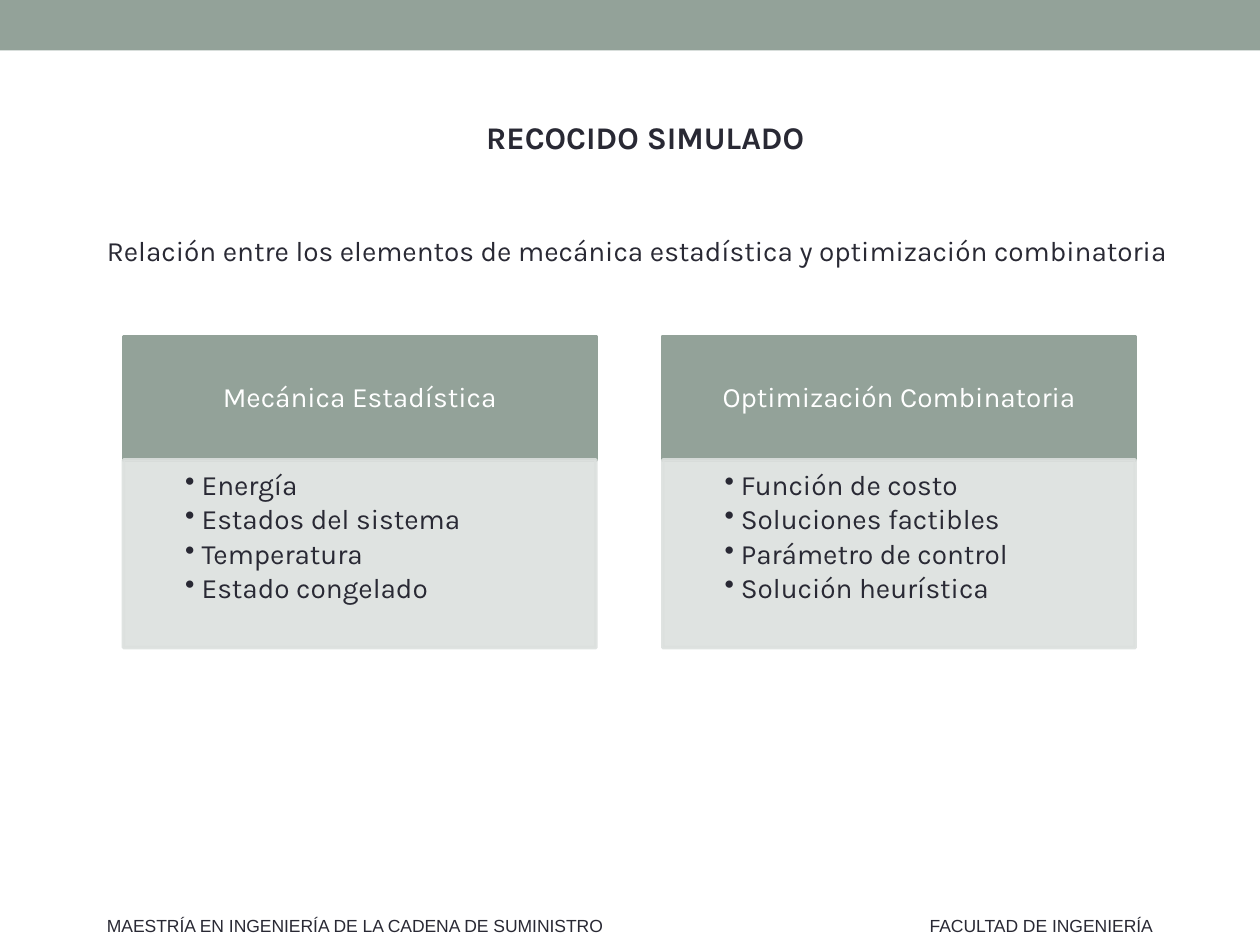
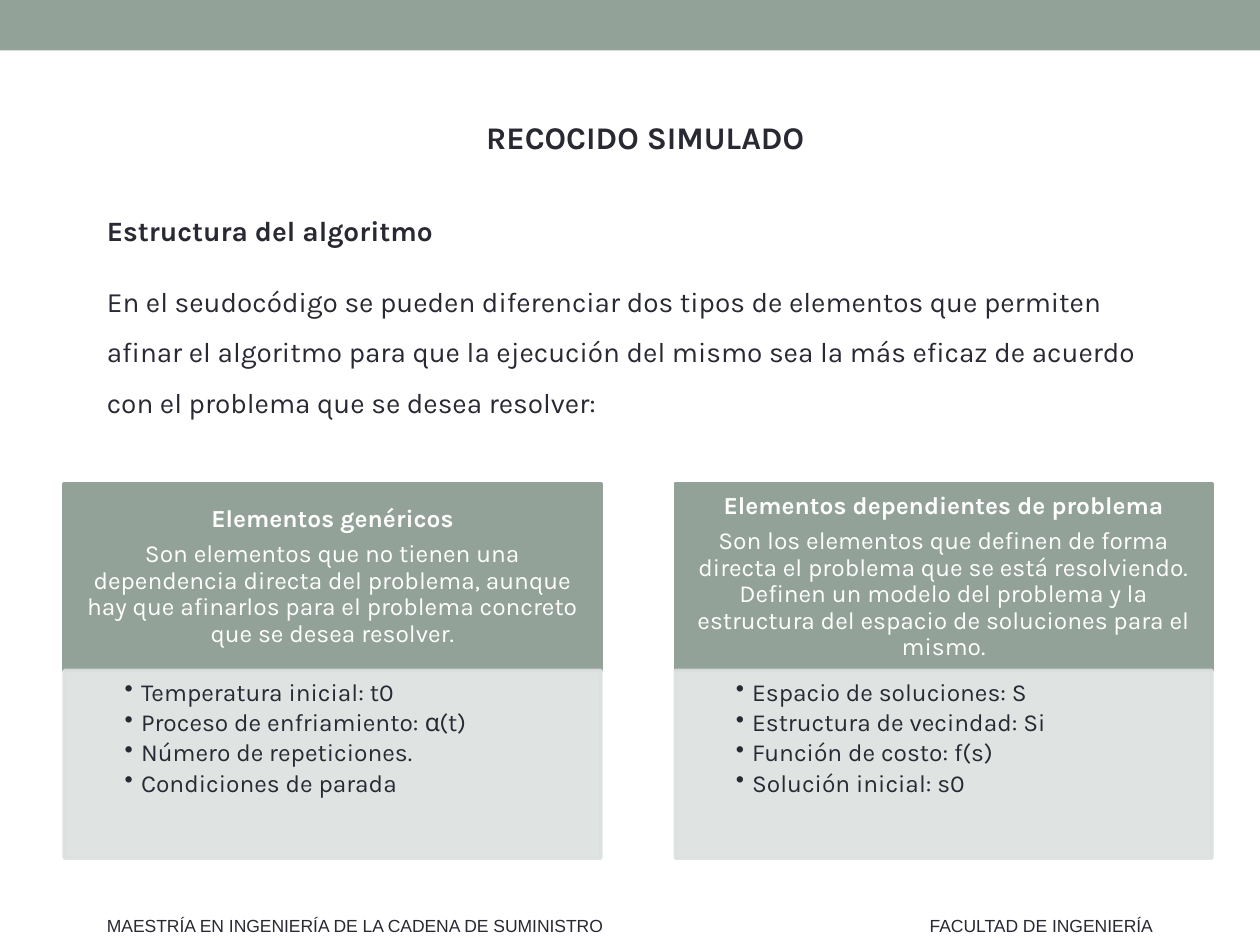
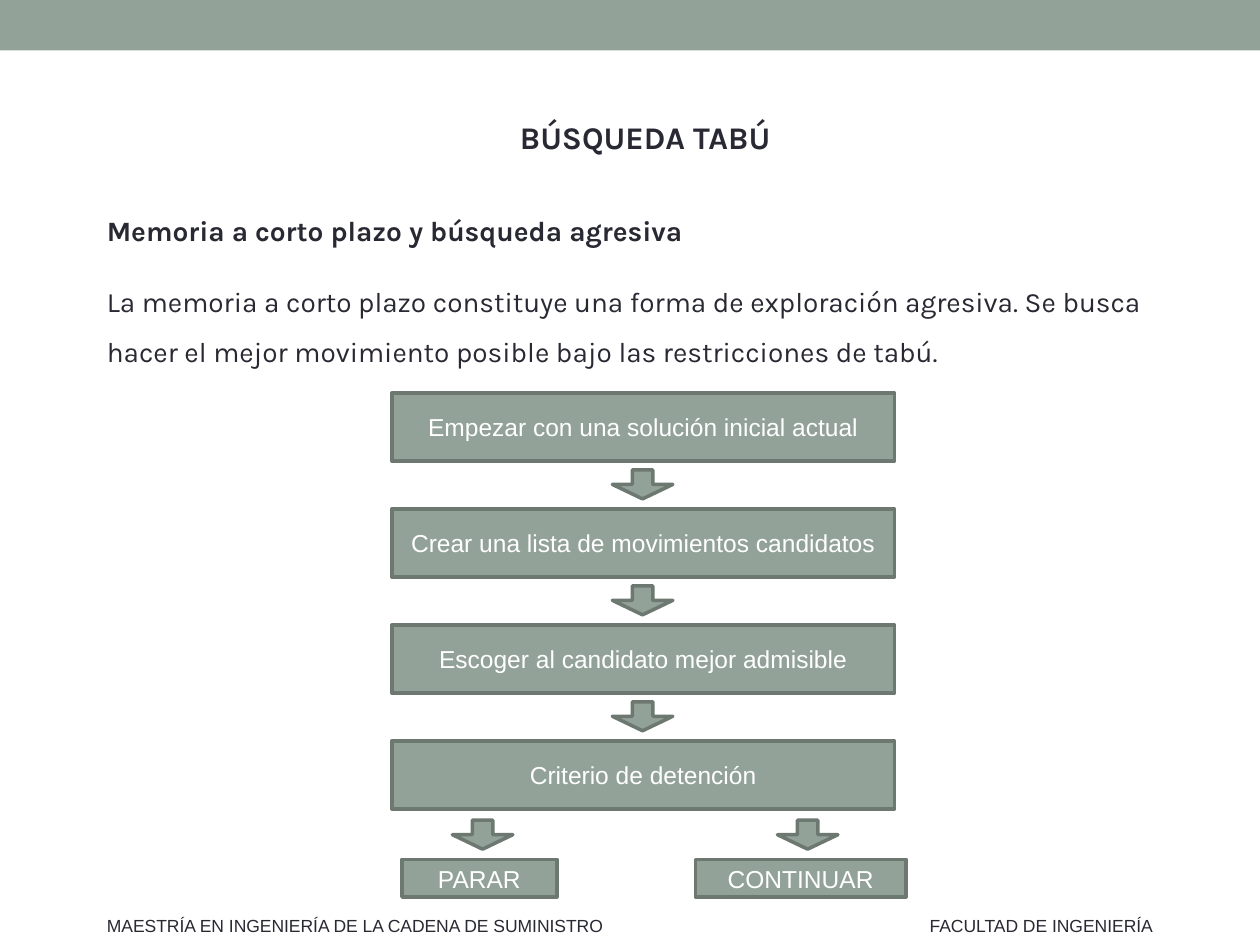
import dataclasses

import lxml.etree
import pptx
import pptx.dml.color
import pptx.enum.shapes
import pptx.enum.text
import pptx.oxml.ns
import pptx.util

Inches = pptx.util.Inches
Pt = pptx.util.Pt
RGBColor = pptx.dml.color.RGBColor
Shape = pptx.enum.shapes.MSO_SHAPE
Align = pptx.enum.text.PP_ALIGN
Anchor = pptx.enum.text.MSO_ANCHOR
qn = pptx.oxml.ns.qn


@dataclasses.dataclass(frozen=True)
class Theme:
    sage: RGBColor = RGBColor.from_string("93A299")
    sage_dark: RGBColor = RGBColor.from_string("6D7871")
    mist: RGBColor = RGBColor.from_string("DCE0DE")
    ink: RGBColor = RGBColor.from_string("292934")
    white: RGBColor = RGBColor.from_string("FFFFFF")
    heading_font: str = "Karla"
    plain_font: str = "Arial"
    title_size: int = 18
    body_size: int = 16
    small_size: int = 14
    footer_size: int = 10
    line_width: int = 2


theme = Theme()


def add_shape(page, kind, place, fill, line=None, opacity=None):
    shape = page.shapes.add_shape(kind, *[Inches(value) for value in place])
    shape.shadow.inherit = False
    shape.fill.solid()
    shape.fill.fore_color.rgb = fill
    if line is None:
        shape.line.fill.background()
    else:
        shape.line.color.rgb = line
        shape.line.width = Pt(theme.line_width)
    if opacity:
        for color in shape._element.spPr.iter(qn("a:srgbClr")):
            lxml.etree.SubElement(color, qn("a:alpha"), val=str(opacity * 1000))
    return shape


def write(box, lines, size, color, font=theme.heading_font, align=Align.LEFT,
          anchor=Anchor.TOP, insets=(0.1, 0.05, 0.1, 0.05), spacing=1.0,
          after=0, bold_first=False, bullets=False, wrap=True):
    frame = box.text_frame
    frame.word_wrap = wrap
    frame.auto_size = pptx.enum.text.MSO_AUTO_SIZE.NONE
    frame.vertical_anchor = anchor
    frame.margin_left, frame.margin_top, frame.margin_right, frame.margin_bottom = [
        Inches(value) for value in insets]
    for index, line in enumerate(lines):
        para = frame.paragraphs[0] if index == 0 else frame.add_paragraph()
        para.alignment = align
        para.line_spacing = spacing
        para.space_after = Pt(after)
        if bullets:
            properties = para._p.get_or_add_pPr()
            properties.set("marL", str(Inches(0.53)))
            properties.set("indent", str(Inches(-0.13)))
            lxml.etree.SubElement(properties, qn("a:buChar"), char="•")
        span = para.add_run()
        span.text = line
        span.font.name = font
        span.font.size = Pt(size)
        span.font.color.rgb = color
        span.font.bold = bold_first and index == 0


deck = pptx.Presentation()
deck.slide_width = Inches(10)
deck.slide_height = Inches(7.5)

footers = [
    (0.75, 4.21, "MAESTRÍA EN INGENIERÍA DE LA CADENA DE SUMINISTRO"),
    (7.28, 2.02, "FACULTAD DE INGENIERÍA"),
]
contents = [
    ("RECOCIDO SIMULADO", 1.67, [
        "Relación entre los elementos de mecánica estadística y optimización combinatoria",
    ]),
    ("RECOCIDO SIMULADO", 1.51, [
        "Estructura del algoritmo",
        "En el seudocódigo se pueden diferenciar dos tipos de elementos que permiten "
        "afinar el algoritmo para que la ejecución del mismo sea la más eficaz de acuerdo "
        "con el problema que se desea resolver:",
    ]),
    ("BÚSQUEDA TABÚ", 1.51, [
        "Memoria a corto plazo y búsqueda agresiva",
        "La memoria a corto plazo constituye una forma de exploración agresiva. Se busca "
        "hacer el mejor movimiento posible bajo las restricciones de tabú.",
    ]),
]

pages = []
for title_text, body_top, body_lines in contents:
    page = deck.slides.add_slide(deck.slide_layouts[5])
    pages.append(page)
    add_shape(page, Shape.RECTANGLE, (0, 0, 10, 0.4), theme.sage)

    title = page.shapes.title
    title.left, title.top = Inches(0.75), Inches(0.8)
    title.width, title.height = Inches(8.74), Inches(0.58)
    write(title, [title_text], theme.title_size, theme.ink, align=Align.CENTER,
          anchor=Anchor.MIDDLE, bold_first=True)

    body = page.shapes.add_textbox(
        Inches(0.75), Inches(body_top), Inches(8.74), Inches(1.9))
    write(body, body_lines, theme.body_size, theme.ink, spacing=1.5, after=12,
          bold_first=len(body_lines) > 1)

    for left, width, text in footers:
        footer = page.shapes.add_textbox(
            Inches(left), Inches(7.21), Inches(width), Inches(0.27))
        write(footer, [text], theme.footer_size, theme.ink, theme.plain_font, wrap=False)

relation_page, structure_page, tabu_page = pages

card_groups = [
    (relation_page, theme.body_size, (0.98, 5.26), 3.75, 2.67, 0.98,
     (0.12, 0.07, 0.12, 0.07), (0.09, 0.09, 0.12, 0.14), [
         (["Mecánica Estadística"],
          ["Energía", "Estados del sistema", "Temperatura", "Estado congelado"]),
         (["Optimización Combinatoria"],
          ["Función de costo", "Soluciones factibles", "Parámetro de control",
           "Solución heurística"]),
     ]),
    (structure_page, theme.small_size, (0.51, 5.36), 4.26, 3.84, 1.48,
     (0.11, 0.06, 0.11, 0.06), (0.08, 0.08, 0.11, 0.12), [
         (["Elementos genéricos",
           "Son elementos que no tienen una dependencia directa del problema, aunque "
           "hay que afinarlos para el problema concreto que se desea resolver."],
          ["Temperatura inicial: t0", "Proceso de enfriamiento: α(t)",
           "Número de repeticiones.", "Condiciones de parada"]),
         (["Elementos dependientes de problema",
           "Son los elementos que definen de forma directa el problema que se está "
           "resolviendo. Definen un modelo del problema y la estructura del espacio de "
           "soluciones para el mismo."],
          ["Espacio de soluciones: S", "Estructura de vecindad: Si",
           "Función de costo: f(s)", "Solución inicial: s0"]),
     ]),
]

for page, size, lefts, width, top, head_height, head_insets, list_insets, cards in card_groups:
    for left, (heading, items) in zip(lefts, cards):
        head = add_shape(page, Shape.RECTANGLE, (left, top, width, head_height),
                         theme.sage, theme.sage)
        write(head, heading, size, theme.white, align=Align.CENTER, anchor=Anchor.MIDDLE,
              insets=head_insets, spacing=0.9, after=size * 0.35,
              bold_first=len(heading) > 1)
        panel = add_shape(page, Shape.RECTANGLE, (left, top + head_height, width, 1.49),
                          theme.mist, theme.mist, opacity=90)
        write(panel, items, size, theme.ink, insets=list_insets, spacing=0.9,
              after=size * 0.15, bullets=True)

steps = [
    "Empezar con una solución inicial actual",
    "Crear una lista de movimientos candidatos",
    "Escoger al candidato mejor admisible",
    "Criterio de detención",
]
step_pitch = 0.92
flow_boxes = [((3.11, 3.12 + index * step_pitch, 3.99, 0.54), text)
              for index, text in enumerate(steps)]
flow_boxes += [((3.19, 6.82, 1.23, 0.3), "PARAR"), ((5.52, 6.82, 1.67, 0.3), "CONTINUAR")]
for place, text in flow_boxes:
    box = add_shape(tabu_page, Shape.RECTANGLE, place, theme.sage, theme.sage_dark)
    write(box, [text], theme.small_size, theme.white, theme.plain_font,
          align=Align.CENTER, anchor=Anchor.MIDDLE)

arrow_places = [(4.86, 3.73 + index * step_pitch) for index in range(len(steps) - 1)]
arrow_places += [(3.59, 6.51), (6.17, 6.51)]
for left, top in arrow_places:
    arrow = add_shape(tabu_page, Shape.DOWN_ARROW, (left, top, 0.48, 0.23),
                      theme.sage, theme.sage_dark)
    arrow.adjustments[0] = 0.34
    arrow.adjustments[1] = 0.5

deck.save("out.pptx")
